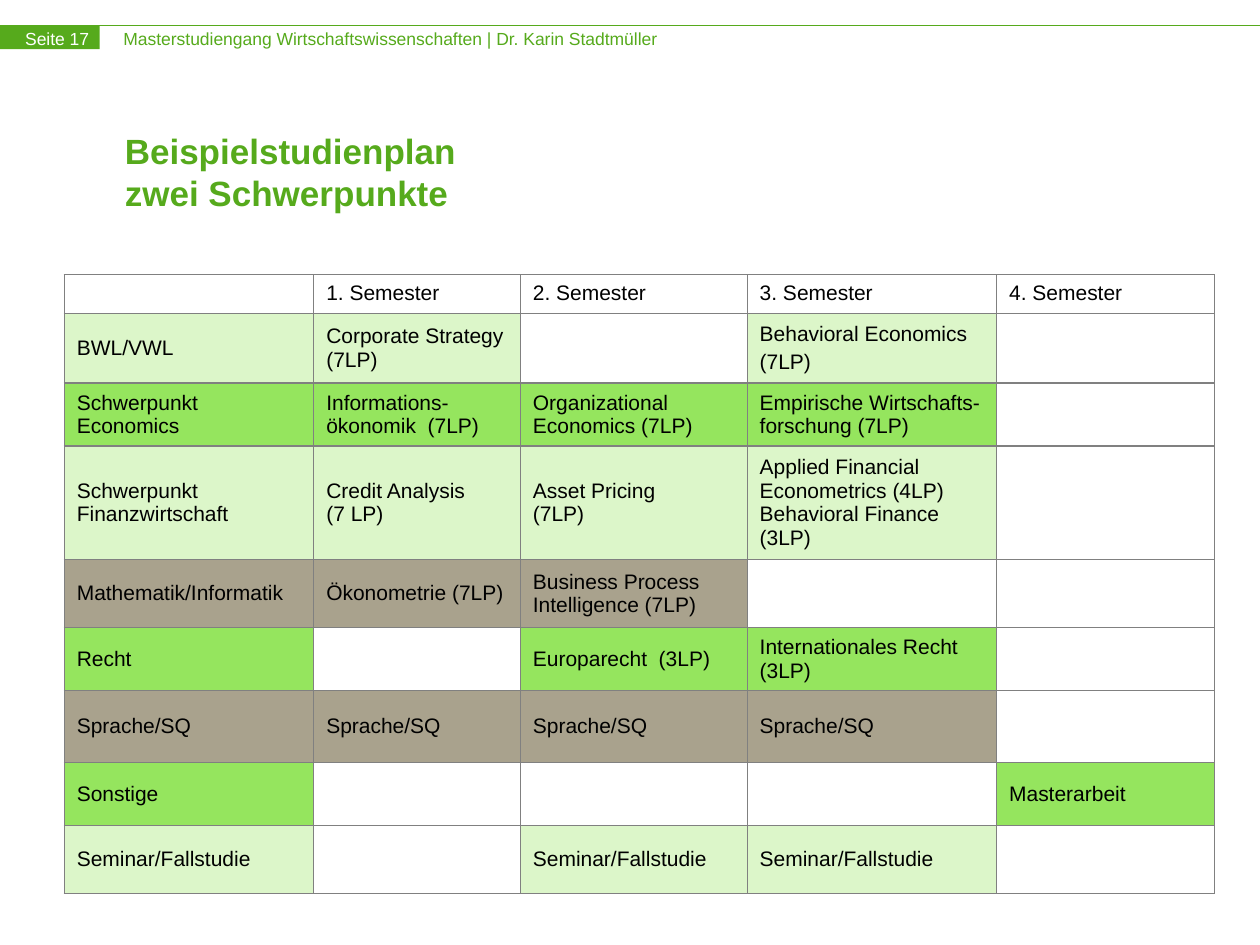
from dataclasses import dataclass

from lxml import etree
from pptx import Presentation
from pptx.dml.color import RGBColor
from pptx.enum.shapes import MSO_CONNECTOR, MSO_SHAPE
from pptx.enum.text import MSO_ANCHOR, MSO_AUTO_SIZE, PP_ALIGN
from pptx.oxml.ns import qn
from pptx.util import Inches, Pt

LINE = MSO_CONNECTOR.STRAIGHT
RECT = MSO_SHAPE.RECTANGLE
TOP, MIDDLE = MSO_ANCHOR.TOP, MSO_ANCHOR.MIDDLE
FIXED = MSO_AUTO_SIZE.NONE
LEFT = PP_ALIGN.LEFT
TITLE_ONLY = 5


@dataclass(frozen=True)
class Theme:
    """Colours, font and type sizes of the slide."""
    font: str = "Arial"
    green: str = "56AA1C"
    lime: str = "95E55E"
    pale: str = "DCF6C9"
    taupe: str = "A9A28D"
    white: str = "FFFFFF"
    black: str = "000000"
    grid: str = "808080"
    small: int = 10
    body: int = 12
    head: int = 20
    rule: float = 0.75


THEME = Theme()
COLS = [1.98, 1.64, 1.8, 1.98, 1.73]
PLAN = [
    (0.31, THEME.white, ["", "1. Semester", "2. Semester", "3. Semester", "4. Semester"]),
    (0.55, THEME.pale, ["BWL/VWL", "Corporate Strategy (7LP)", "",
                        "Behavioral Economics\n(7LP)", ""]),
    (0.47, THEME.lime, ["Schwerpunkt Economics", "Informations-ökonomik  (7LP)",
                        "Organizational Economics (7LP)",
                        "Empirische Wirtschafts- forschung (7LP)", ""]),
    (0.85, THEME.pale, ["Schwerpunkt Finanzwirtschaft", "Credit Analysis \v(7 LP)",
                        "Asset Pricing \v(7LP)",
                        "Applied Financial Econometrics (4LP) Behavioral Finance (3LP)", ""]),
    (0.54, THEME.taupe, ["Mathematik/Informatik", "Ökonometrie (7LP)",
                         "Business Process Intelligence (7LP)", "", ""]),
    (0.47, THEME.lime, ["Recht", "", "Europarecht  (3LP)", "Internationales Recht (3LP)", ""]),
    (0.57, THEME.taupe, ["Sprache/SQ"] * 4 + [""]),
    (0.5, THEME.lime, ["Sonstige", "", "", "", "Masterarbeit"]),
    (0.54, THEME.pale, ["Seminar/Fallstudie", "", "Seminar/Fallstudie",
                        "Seminar/Fallstudie", ""]),
]


def rgb(tone):
    """Turn a hex string into a colour."""
    return RGBColor.from_string(tone)


def style(frame, size, tone, bold=False):
    """Format every run of a text frame."""
    for para in frame.paragraphs:
        for run in para.runs:
            font = run.font
            font.name, font.size, font.bold = THEME.font, Pt(size), bold
            font.color.rgb = rgb(tone)


def label(slide, box, text, tone):
    """Place a small text without insets."""
    frame = slide.shapes.add_textbox(*map(Inches, box)).text_frame
    frame.margin_left = frame.margin_right = 0
    frame.margin_top = frame.margin_bottom = 0
    frame.word_wrap = True
    frame.text = text
    style(frame, THEME.small, tone)


def header(slide, box):
    """Draw the top rule, the page tag and the running head."""
    x, y, w, h = box
    rule = slide.shapes.add_connector(LINE, *map(Inches, (x, y, x + w, y)))
    rule.line.color.rgb = rgb(THEME.green)
    rule.line.width = Pt(THEME.rule)
    etree.SubElement(rule.element.spPr, qn("a:effectLst"))
    tag = slide.shapes.add_shape(RECT, *map(Inches, (x, y, 0.79, h)))
    tag.shadow.inherit = False
    tag.fill.solid()
    tag.fill.fore_color.rgb = rgb(THEME.green)
    tag.line.fill.background()
    label(slide, (x + 0.98, y + 0.02, 6.6, 0.17),
          "Masterstudiengang Wirtschaftswissenschaften | Dr. Karin Stadtmüller", THEME.green)
    label(slide, (x + 0.2, y + 0.02, 0.62, 0.17), "Seite 17", THEME.white)


def title(slide, box):
    """Place and format the title."""
    shape = slide.shapes.title
    shape.left, shape.top, shape.width, shape.height = map(Inches, box)
    frame = shape.text_frame
    frame.text = "Beispielstudienplan\vzwei Schwerpunkte"
    frame.auto_size, frame.vertical_anchor = FIXED, MIDDLE
    para = frame.paragraphs[0]
    para.alignment, para.line_spacing = LEFT, Pt(24)
    style(frame, THEME.head, THEME.green, True)


def border(cell):
    """Draw a thin line on all four sides of a cell."""
    props = cell._tc.get_or_add_tcPr()
    for side in ("a:lnL", "a:lnR", "a:lnT", "a:lnB"):
        line = etree.SubElement(props, qn(side), w=str(Pt(THEME.rule)))
        fill = etree.SubElement(line, qn("a:solidFill"))
        etree.SubElement(fill, qn("a:srgbClr"), val=THEME.grid)


def fill_cell(cell, text, tone, anchor):
    """Set text, border and fill of one cell."""
    border(cell)
    cell.fill.solid()
    cell.fill.fore_color.rgb = rgb(tone if text else THEME.white)
    cell.vertical_anchor = anchor
    frame = cell.text_frame
    frame.text = text
    style(frame, THEME.body, THEME.black)
    for para in frame.paragraphs:
        para.space_before = Pt(0.2 * THEME.body)
        if not text:
            etree.SubElement(para._p, qn("a:endParaRPr"), sz=str(100 * THEME.body))


def plan(slide, box):
    """Build the study plan table."""
    table = slide.shapes.add_table(len(PLAN), len(COLS), *map(Inches, box)).table
    table.first_row = table.horz_banding = False
    for col, width in zip(table.columns, COLS):
        col.width = Inches(width)
    for i, (height, tone, texts) in enumerate(PLAN):
        table.rows[i].height = Inches(height)
        for j, text in enumerate(texts):
            fill_cell(table.cell(i, j), text, tone, MIDDLE if i else TOP)


def main():
    """Build and save the slide."""
    deck = Presentation()
    deck.slide_width, deck.slide_height = Inches(10), Inches(7.5)
    slide = deck.slides.add_slide(deck.slide_layouts[TITLE_ONLY])
    header(slide, (0, 0.2, 10, 0.19))
    title(slide, (0.89, 1, 8.53, 0.72))
    plan(slide, (0.51, 2.18, sum(COLS), sum(row[0] for row in PLAN)))
    deck.save("out.pptx")


if __name__ == "__main__":
    main()
